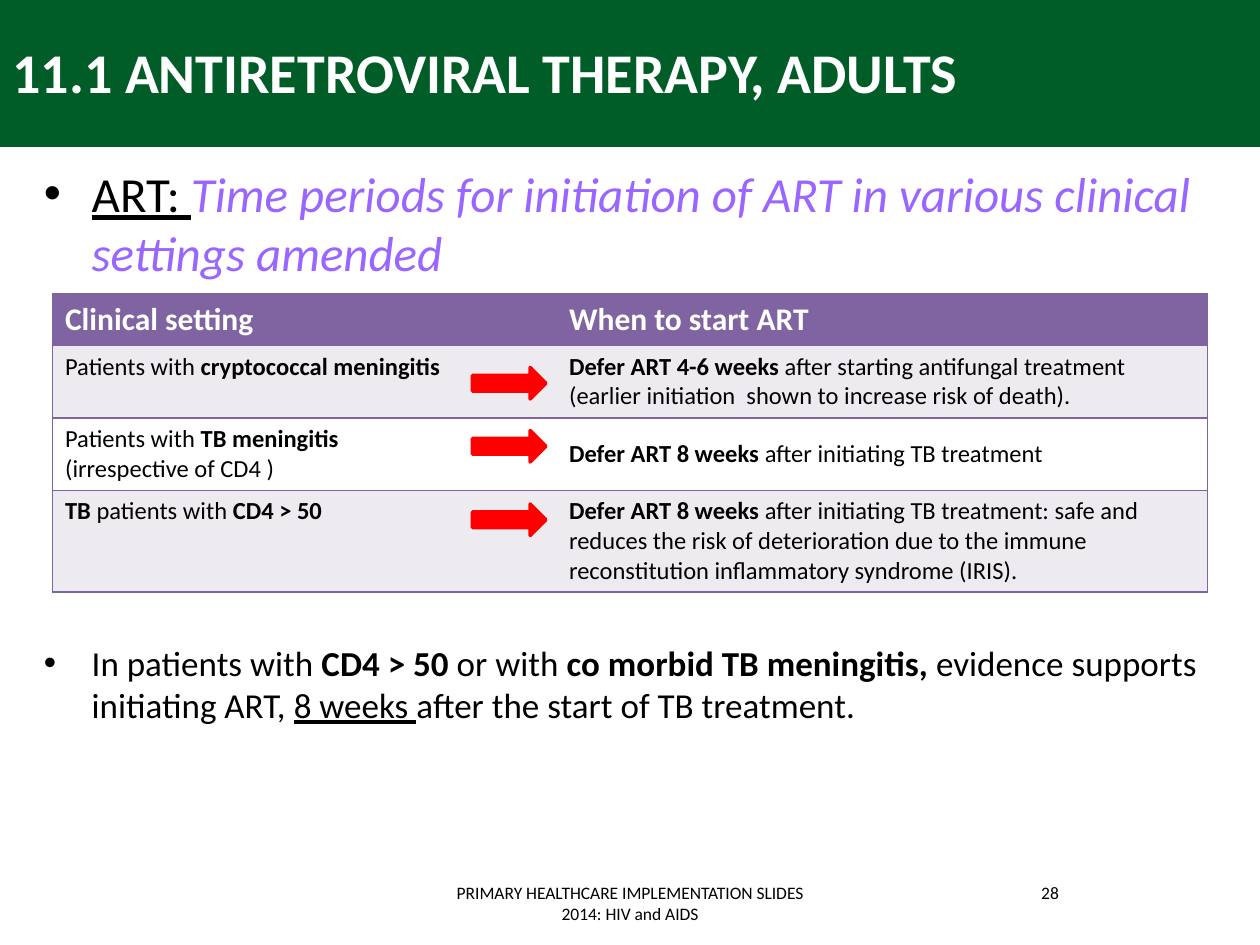
from dataclasses import dataclass

from lxml import etree
from pptx import Presentation
from pptx.dml.color import RGBColor
from pptx.enum.shapes import MSO_SHAPE
from pptx.enum.text import PP_ALIGN
from pptx.oxml.ns import qn
from pptx.util import Inches, Pt

RECTANGLE, RIGHT_ARROW = MSO_SHAPE.RECTANGLE, MSO_SHAPE.RIGHT_ARROW
LEFT, CENTER = PP_ALIGN.LEFT, PP_ALIGN.CENTER

FONT = "Calibri"
COLORS = {
    "banner": "005D28",
    "white": "FFFFFF",
    "black": "000000",
    "amended": "9966FF",
    "table": "8064A2",
    "band": "EDEAF0",
    "arrow": "FF0000",
}
SLIDE_WIDTH, SLIDE_HEIGHT = Inches(10), Inches(7.5)
UNIT = SLIDE_WIDTH / 120  # the slide is a grid of 120 columns by 90 rows


@dataclass(frozen=True)
class Span:
    text: str
    bold: bool = False
    italic: bool = False
    underline: bool = False
    color: str = "black"


@dataclass(frozen=True)
class Area:
    col: float
    row: float
    cols: float
    rows: float

    def emu(self) -> list[int]:
        return [grid(n) for n in (self.col, self.row, self.cols, self.rows)]


@dataclass(frozen=True)
class TextBlock:
    area: Area
    size: int
    spans: list[Span]
    align: PP_ALIGN = LEFT
    bullet: bool = False


@dataclass(frozen=True)
class Setting:
    """One table row; each cell is a list of paragraphs made of spans."""
    rows: float
    size: int
    fill: str
    clinical: list[list[Span]]
    start: list[list[Span]]
    start_spacing: float = 1.0


BLOCKS = [
    TextBlock(Area(0, 3, 108, 11), 32,
              [Span("11.1 ANTIRETROVIRAL THERAPY, ADULTS", bold=True, color="white")]),
    TextBlock(Area(3, 15, 113, 13), 28, [
        Span("ART: ", underline=True),
        Span("Time periods for initiation of ART in various clinical settings amended",
             italic=True, color="amended"),
    ], bullet=True),
    TextBlock(Area(3, 60.5, 113, 10), 20, [
        Span("In patients with "),
        Span("CD4 > 50", bold=True),
        Span(" or with "),
        Span("co morbid TB meningitis,", bold=True),
        Span(" evidence supports initiating ART, "),
        Span("8 weeks ", underline=True),
        Span("after the start of TB treatment."),
    ], bullet=True),
    TextBlock(Area(41, 83.4, 38, 4.8), 10,
              [Span("PRIMARY HEALTHCARE IMPLEMENTATION SLIDES 2014: HIV and AIDS")], CENTER),
    TextBlock(Area(86, 83.4, 28, 4.8), 10, [Span("28")], CENTER),
]

SETTINGS = [
    Setting(4.9, 18, "table",
            [[Span("Clinical setting", bold=True, color="white")]],
            [[Span("When to start ART", bold=True, color="white")]]),
    Setting(6.9, 14, "band",
            [[Span("Patients with "), Span("cryptococcal meningitis", bold=True)]],
            [[Span("Defer ART 4-6 weeks ", bold=True),
              Span("after starting antifungal treatment (earlier initiation  shown "
                   "to increase risk of death).")]]),
    Setting(6.9, 14, "white",
            [[Span("Patients with "), Span("TB meningitis", bold=True)],
             [Span("(irrespective of CD4 )")]],
            [[Span("Defer ART 8 weeks ", bold=True),
              Span("after initiating TB treatment")]], start_spacing=1.5),
    Setting(9.7, 14, "band",
            [[Span("TB", bold=True), Span(" patients with "), Span("CD4 > 50", bold=True)]],
            [[Span("Defer ART 8 weeks ", bold=True),
              Span("after initiating TB treatment: safe and reduces the risk of "
                   "deterioration due to the immune reconstitution inflammatory "
                   "syndrome (IRIS).")]]),
]
TABLE_COL, TABLE_ROW = 5, 28
TABLE_COLUMNS = (48, 62)
ARROW_ROWS = (35, 41, 48)


def grid(units: float) -> int:
    return round(units * UNIT)


def rgb(name: str) -> RGBColor:
    return RGBColor.from_string(COLORS[name])


def add_spans(paragraph, spans: list[Span], size: int) -> None:
    for span in spans:
        run = paragraph.add_run()
        run.text = span.text
        font = run.font
        font.name, font.size = FONT, Pt(size)
        font.bold, font.italic, font.underline = span.bold, span.italic, span.underline
        font.color.rgb = rgb(span.color)


def add_bullet(paragraph) -> None:
    """Give the paragraph a bullet with a hanging indent."""
    properties = paragraph._p.get_or_add_pPr()
    indent = Inches(0.38)
    properties.set("marL", str(indent))
    properties.set("indent", str(-indent))
    etree.SubElement(properties, qn("a:buFont"), typeface="Arial")
    etree.SubElement(properties, qn("a:buChar"), char="•")


def add_text(slide, block: TextBlock) -> None:
    frame = slide.shapes.add_textbox(*block.area.emu()).text_frame
    frame.word_wrap = True
    paragraph = frame.paragraphs[0]
    if block.bullet:
        add_bullet(paragraph)
    paragraph.alignment = block.align
    add_spans(paragraph, block.spans, block.size)


def add_filled_shape(slide, kind: MSO_SHAPE, area: Area, color: str, line_width: float = 0) -> None:
    shape = slide.shapes.add_shape(kind, *area.emu())
    shape.shadow.inherit = False
    shape.fill.solid()
    shape.fill.fore_color.rgb = rgb(color)
    if line_width:
        shape.line.color.rgb = rgb(color)
        shape.line.width = Pt(line_width)
    else:
        shape.line.fill.background()


def set_borders(cell, inner_side: str) -> None:
    """Rule every side of the cell except the one shared with its neighbour."""
    properties = cell._tc.get_or_add_tcPr()
    for side in "LRTB":
        line = etree.SubElement(properties, qn(f"a:ln{side}"), w=str(Pt(1)))
        if side == inner_side:
            etree.SubElement(line, qn("a:noFill"))
        else:
            fill = etree.SubElement(line, qn("a:solidFill"))
            etree.SubElement(fill, qn("a:srgbClr"), val=COLORS["table"])


def fill_cell(cell, paragraphs: list[list[Span]], size: int, fill: str,
              inner_side: str, spacing: float) -> None:
    set_borders(cell, inner_side)
    cell.fill.solid()
    cell.fill.fore_color.rgb = rgb(fill)
    frame = cell.text_frame
    for index, spans in enumerate(paragraphs):
        paragraph = frame.add_paragraph() if index else frame.paragraphs[0]
        paragraph.line_spacing = spacing
        add_spans(paragraph, spans, size)


def add_settings_table(slide) -> None:
    area = Area(TABLE_COL, TABLE_ROW, sum(TABLE_COLUMNS), sum(s.rows for s in SETTINGS))
    table = slide.shapes.add_table(len(SETTINGS), len(TABLE_COLUMNS), *area.emu()).table
    table.first_row = table.horz_banding = False
    for column, width in zip(table.columns, TABLE_COLUMNS):
        column.width = grid(width)
    for index, setting in enumerate(SETTINGS):
        table.rows[index].height = grid(setting.rows)
        fill_cell(table.cell(index, 0), setting.clinical, setting.size, setting.fill, "R", 1.0)
        fill_cell(table.cell(index, 1), setting.start, setting.size, setting.fill, "L",
                  setting.start_spacing)


def main() -> None:
    deck = Presentation()
    deck.slide_width, deck.slide_height = SLIDE_WIDTH, SLIDE_HEIGHT
    slide = deck.slides.add_slide(deck.slide_layouts[6])
    add_filled_shape(slide, RECTANGLE, Area(0, 0, 120, 14), "banner")
    for block in BLOCKS:
        add_text(slide, block)
    add_settings_table(slide)
    for row in ARROW_ROWS:
        add_filled_shape(slide, RIGHT_ARROW, Area(45, row, 7, 3), "arrow", line_width=2)
    deck.save("out.pptx")


if __name__ == "__main__":
    main()
